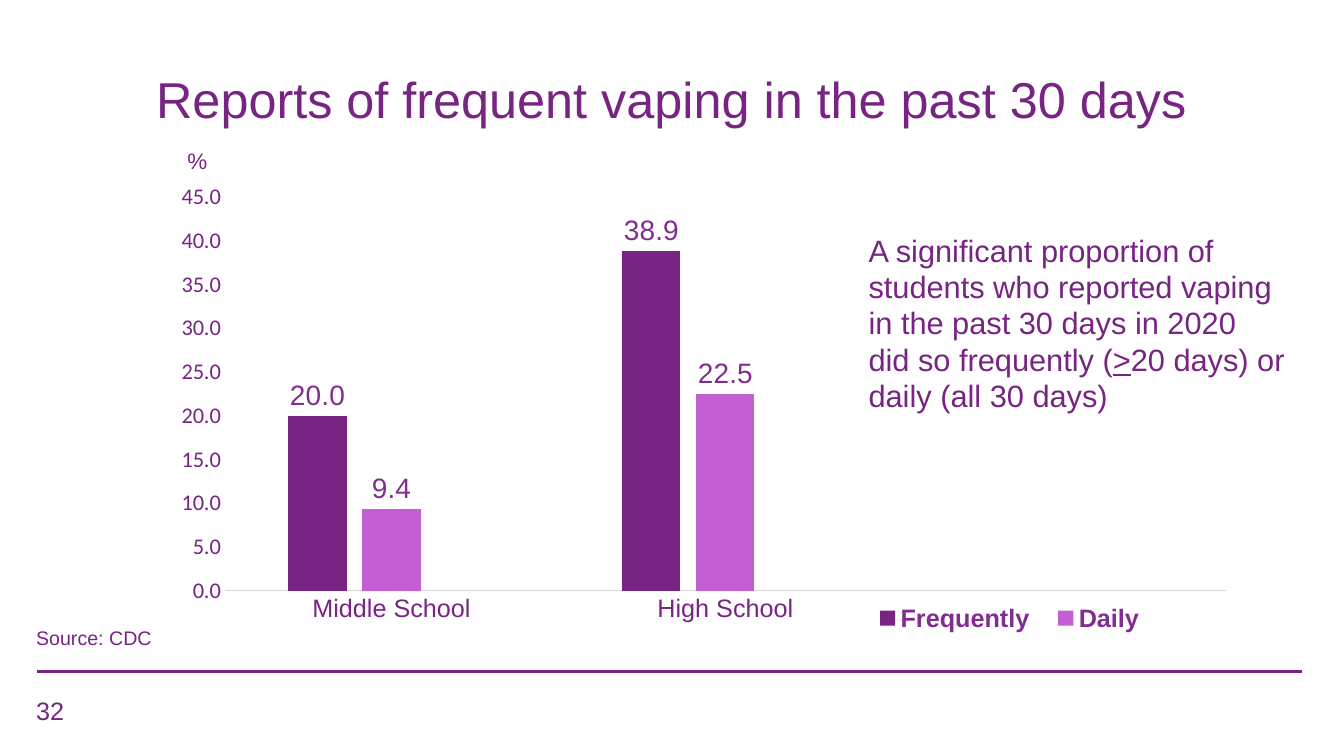
"""Build a slide with a column chart of frequent vaping among students."""
from pptx import Presentation
from pptx.chart.data import CategoryChartData
from pptx.dml.color import RGBColor
from pptx.enum.chart import XL_CHART_TYPE, XL_LABEL_POSITION, XL_LEGEND_POSITION, XL_TICK_MARK
from pptx.enum.shapes import MSO_CONNECTOR
from pptx.enum.text import MSO_ANCHOR, PP_ALIGN
from pptx.oxml import parse_xml
from pptx.oxml.ns import nsdecls, qn
from pptx.util import Cm, Pt
from lxml.etree import SubElement

PURPLE = RGBColor(0x77, 0x24, 0x83)
VIOLET = RGBColor(0x82, 0x2C, 0x91)
ORCHID = RGBColor(0xC4, 0x5E, 0xD3)
GREY = RGBColor(0xD9, 0xD9, 0xD9)

SCHOOLS = ["Middle School", "High School", ""]
REPORTS = [
    ("Frequently", (20, 38.9, None), PURPLE),
    ("Daily", (9.4, 22.5, None), ORCHID),
    ("", (None, None, None), PURPLE),
]


def set_font(font, size, color=PURPLE, name="Arial", bold=False):
    font.name = name
    font.size = Pt(size)
    font.bold = bold
    font.color.rgb = color


def chart_layout(x, y, width, height, inner=False):
    target = '<c:layoutTarget val="inner"/>' if inner else ""
    sizes = zip("xywh", (x, y, width, height))
    return parse_xml(
        f'<c:layout {nsdecls("c")}><c:manualLayout>{target}'
        '<c:xMode val="edge"/><c:yMode val="edge"/>'
        + "".join(f'<c:{key} val="{value}"/>' for key, value in sizes)
        + "</c:manualLayout></c:layout>"
    )


def add_title(slide, text):
    title = slide.shapes.title
    title.left, title.top, title.width, title.height = Cm(1.52), Cm(0), Cm(30.81), Cm(3.38)
    title.text_frame.vertical_anchor = MSO_ANCHOR.BOTTOM
    heading = title.text_frame.paragraphs[0]
    heading.text = text
    heading.alignment = PP_ALIGN.CENTER
    heading.line_spacing = 0.9
    set_font(heading.font, 36)


def add_text(slide, text, left, top, width, height, size, wrap=True):
    frame = slide.shapes.add_textbox(Cm(left), Cm(top), Cm(width), Cm(height)).text_frame
    frame.word_wrap = wrap
    paragraph = frame.paragraphs[0]
    paragraph.text = text
    set_font(paragraph.font, size)
    return paragraph


def add_finding(slide):
    finding = add_text(
        slide, "A significant proportion of students who reported vaping in the past 30 days in 2020 ",
        21.64, 5.72, 11.07, 7.7, 22)
    finding.line_spacing = Pt(26)
    finding.add_line_break()
    for text, underlined in (("did so frequently (", False), (">", True),
                             ("20 days) or daily (all 30 days)", False)):
        run = finding.add_run()
        run.text = text
        run.font.underline = underlined


def add_rule(slide):
    rule = slide.shapes.add_connector(
        MSO_CONNECTOR.STRAIGHT, Cm(0.94), Cm(16.92), Cm(32.82), Cm(16.92))
    rule.line.color.rgb = PURPLE
    rule.line.width = Pt(2.25)
    SubElement(rule._element.spPr, qn("a:effectLst"))


def format_axes(chart):
    schools, percent = chart.category_axis, chart.value_axis
    for axis, size, face in ((schools, 18, "Arial"), (percent, 16, "Calibri")):
        axis.major_tick_mark = axis.minor_tick_mark = XL_TICK_MARK.NONE
        axis.has_major_gridlines = False
        set_font(axis.tick_labels.font, size, name=face)
    schools.format.line.color.rgb = GREY
    schools.format.line.width = Pt(0.75)
    percent.minimum_scale, percent.maximum_scale, percent.major_unit = 0, 45, 5
    percent.format.line.fill.background()
    percent.tick_labels.number_format = "0.0"
    percent.tick_labels.number_format_is_linked = False


def format_series(plot):
    plot.gap_width = 219
    plot.overlap = -27
    plot.vary_by_categories = False
    for series, (name, _, color) in zip(plot.series, REPORTS):
        series.format.fill.solid()
        series.format.fill.fore_color.rgb = color
        if name:
            labels = series.data_labels
            labels.show_value = True
            labels.position = XL_LABEL_POSITION.OUTSIDE_END
            labels.number_format = "0.0"
            labels.number_format_is_linked = False
            set_font(labels.font, 20, VIOLET)


def format_legend(chart):
    chart.has_legend = True
    legend = chart.legend
    legend.position = XL_LEGEND_POSITION.BOTTOM
    legend.include_in_layout = False
    set_font(legend.font, 18, VIOLET, bold=True)
    element = legend._element
    for layout in element.findall(qn("c:layout")):
        element.remove(layout)
    unnamed_entry = parse_xml(
        f'<c:legendEntry {nsdecls("c")}><c:idx val="2"/><c:delete val="1"/></c:legendEntry>')
    position = element.find(qn("c:legendPos"))
    position.addnext(unnamed_entry)
    unnamed_entry.addnext(chart_layout(0.67, 0.83, 0.27, 0.08))


def add_vaping_chart(slide):
    data = CategoryChartData(number_format="0.0")
    data.categories = SCHOOLS
    for name, values, _ in REPORTS:
        data.add_series(name, values)
    chart = slide.shapes.add_chart(
        XL_CHART_TYPE.COLUMN_CLUSTERED, Cm(2.92), Cm(3.38), Cm(27.99), Cm(14.02), data).chart
    chart.has_title = False
    set_font(chart.font, 10)
    format_axes(chart)
    format_series(chart.plots[0])
    format_legend(chart)
    plot_area = chart._chartSpace.chart.plotArea
    for layout in plot_area.findall(qn("c:layout")):
        plot_area.remove(layout)
    plot_area.insert(0, chart_layout(0.098, 0.114, 0.902, 0.707, inner=True))


def main():
    deck = Presentation()
    deck.slide_width, deck.slide_height = Cm(33.87), Cm(19.05)
    slide = deck.slides.add_slide(deck.slide_layouts[5])
    add_rule(slide)
    add_vaping_chart(slide)
    add_title(slide, "Reports of frequent vaping in the past 30 days")
    add_finding(slide)
    add_text(slide, "32", 0.66, 17.4, 7.62, 1.02, 18)
    add_text(slide, "Source: CDC", 0.66, 15.65, 3.45, 0.86, 14, wrap=False)
    add_text(slide, "%", 4.47, 3.58, 0.89, 0.94, 16)
    deck.save("out.pptx")


if __name__ == "__main__":
    main()
